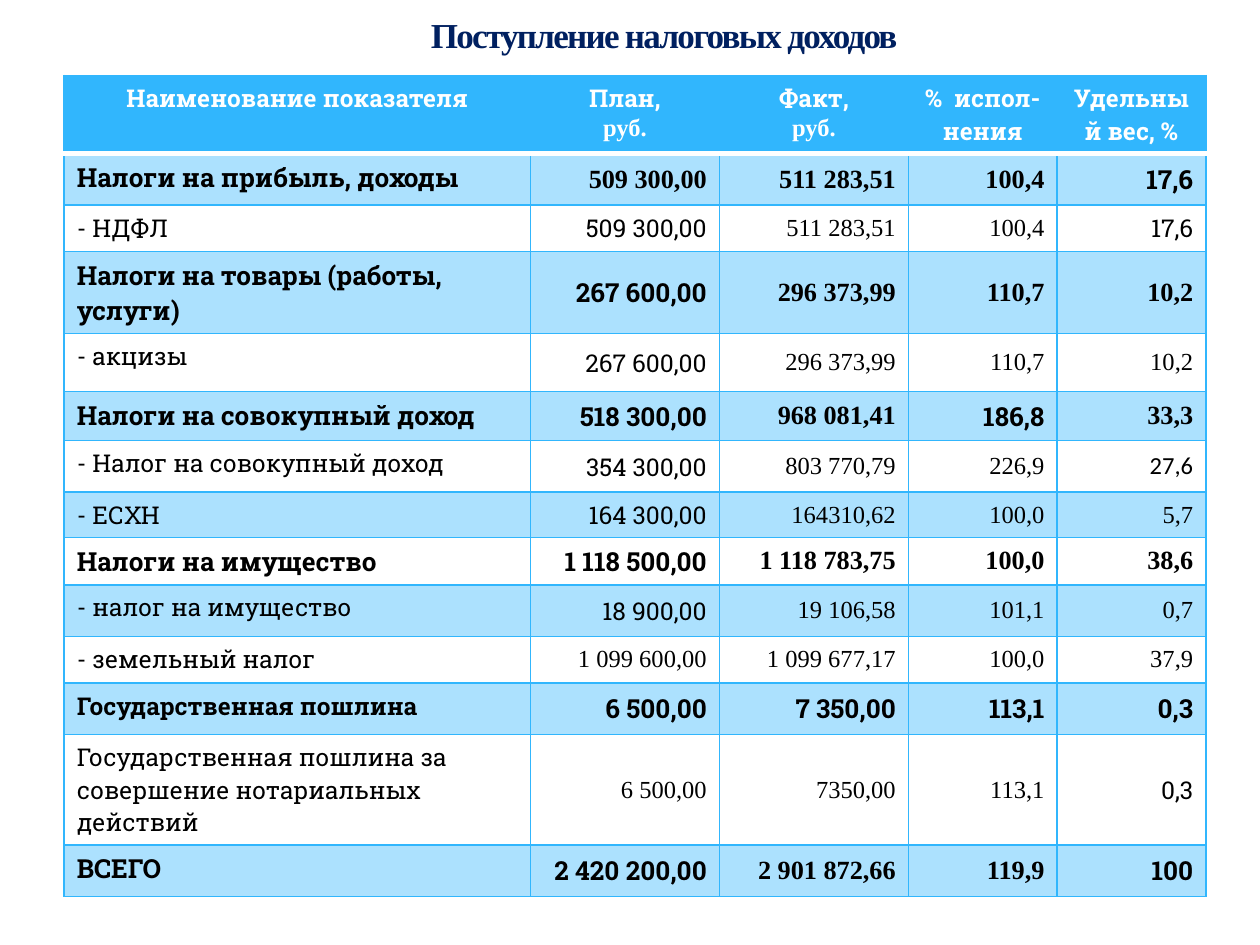
"""Build a slide with a table of tax revenue: plan, fact, share."""
from lxml import etree
from pptx import Presentation
from pptx import util as u
from pptx.dml.color import RGBColor
from pptx.enum import text
from pptx.oxml import ns

HUES = {"blue": "31B6FD", "white": "FFFFFF", "black": "000000", "navy": "002060"}
FONTS = {"R": "Roboto Slab", "T": "Times New Roman", "C": "Calibri"}
COLS = [3.7, 1.5, 1.5, 1.18, 1.18]
HEAD = [
    [("Наименование показателя", "R")],
    [("План,", "R"), ("руб.", "T")],
    [("Факт,", "R"), ("руб.", "T")],
    [("%  испол-нения", "R")],
    [("Удельный вес, %", "R")],
]
# height, bold, label size, fonts by column, values
ROWS = [
    (0.41, True, 15, "RTTTR", "Налоги на прибыль, доходы|509 300,00|511 283,51|100,4|17,6"),
    (0.37, False, 14, "RRTTR", "- НДФЛ|509 300,00|511 283,51|100,4|17,6"),
    (0.46, True, 15, "RRTTT", "Налоги на товары (работы, услуги)|267 600,00|296 373,99|110,7|10,2"),
    (0.46, False, 14, "RRTTT", "- акцизы|267 600,00|296 373,99|110,7|10,2"),
    (0.39, True, 15, "RRTRT", "Налоги на совокупный доход|518 300,00|968 081,41|186,8|33,3"),
    (0.41, False, 14, "RRTTC", "- Налог на совокупный доход|354 300,00|803 770,79|226,9|27,6"),
    (0.26, False, 14, "RRTTT", "- ЕСХН|164 300,00|164310,62|100,0|5,7"),
    (0.31, True, 15, "RRTTT", "Налоги на имущество|1 118 500,00|1 118 783,75|100,0|38,6"),
    (0.41, False, 14, "RRTTT", "- налог на имущество|18 900,00|19 106,58|101,1|0,7"),
    (0.37, False, 14, "RTTTT", "- земельный налог|1 099 600,00|1 099 677,17|100,0|37,9"),
    (0.41, True, 14, "RRRRR", "Государственная пошлина|6 500,00|7 350,00|113,1|0,3"),
    (0.56, False, 14, "RTTTR",
     "Государственная пошлина за совершение нотариальных действий|6 500,00|7350,00|113,1|0,3"),
    (0.41, True, 15, "RRTTR", "ВСЕГО|2 420 200,00|2 901 872,66|119,9|100"),
]


def write(para, words, font, size, hue, bold, align):
    para.alignment = align
    run = para.add_run()
    run.text = words
    run.font.name = FONTS[font]
    run.font.size = u.Pt(size)
    run.font.bold = bold
    run.font.color.rgb = RGBColor.from_string(HUES[hue])
    return run


def rule(cell, side, hue, width):
    line = etree.SubElement(cell._tc.get_or_add_tcPr(), ns.qn(f"a:ln{side}"), w=str(u.Pt(width)))
    fill = etree.SubElement(line, ns.qn("a:solidFill"))
    etree.SubElement(fill, ns.qn("a:srgbClr"), val=HUES[hue])


deck = Presentation()
deck.slide_width, deck.slide_height = u.Inches(10), u.Inches(7.5)
slide = deck.slides.add_slide(deck.slide_layouts[5])
ALIGN = text.PP_ALIGN

title = slide.shapes.title
title.left, title.top = u.Inches(1.61), 0
title.width, title.height = u.Inches(7.32), u.Inches(0.55)
title.text_frame.vertical_anchor = text.MSO_ANCHOR.MIDDLE
run = write(title.text_frame.paragraphs[0], "Поступление налоговых доходов",
            "T", 20, "navy", True, ALIGN.CENTER)
run.font._element.set("spc", "-100")

tall = [0.41] + [row[0] for row in ROWS]
table = slide.shapes.add_table(
    len(tall), len(COLS), u.Inches(0.51), u.Inches(0.6),
    u.Inches(sum(COLS)), u.Inches(sum(tall))).table
table.first_row = True
table.horz_banding = False
for col, wide in zip(table.columns, COLS):
    col.width = u.Inches(wide)

for r, high in enumerate(tall):
    table.rows[r].height = u.Inches(high)
    for c in range(len(COLS)):
        cell = table.cell(r, c)
        for side in "LRTB":
            seam = (r, side) in ((0, "B"), (1, "T"))
            rule(cell, side, "white" if seam else "blue", 3 if seam else 1)
        if r % 2 or r == 0:
            cell.fill.solid()
            cell.fill.fore_color.rgb = RGBColor.from_string(HUES["blue"])
        else:
            cell.fill.background()
        if r % 2:
            tint = cell._tc.tcPr.find(ns.qn("a:solidFill"))[0]
            etree.SubElement(tint, ns.qn("a:alpha"), val="40000")

for c, lines in enumerate(HEAD):
    frame = table.cell(0, c).text_frame
    for i, (words, font) in enumerate(lines):
        para = frame.add_paragraph() if i else frame.paragraphs[0]
        write(para, words, font, 14, "white", True, ALIGN.CENTER)

for r, (_, bold, size, fonts, line) in enumerate(ROWS, 1):
    for c, (words, font) in enumerate(zip(line.split("|"), fonts)):
        cell = table.cell(r, c)
        if c:
            cell.vertical_anchor = text.MSO_ANCHOR.MIDDLE
            size = 15 if bold else 14
        write(cell.text_frame.paragraphs[0], words, font, size, "black", bold,
              ALIGN.RIGHT if c else ALIGN.LEFT)

deck.save("out.pptx")
